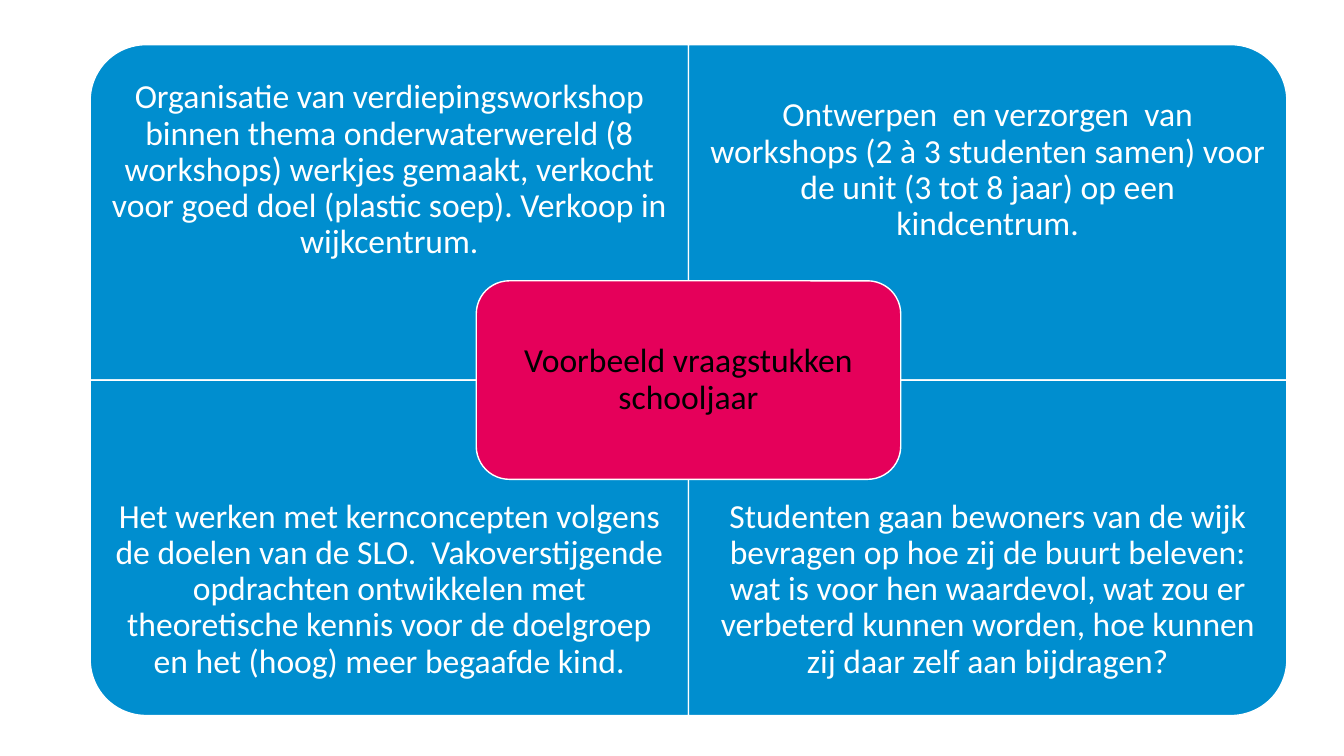
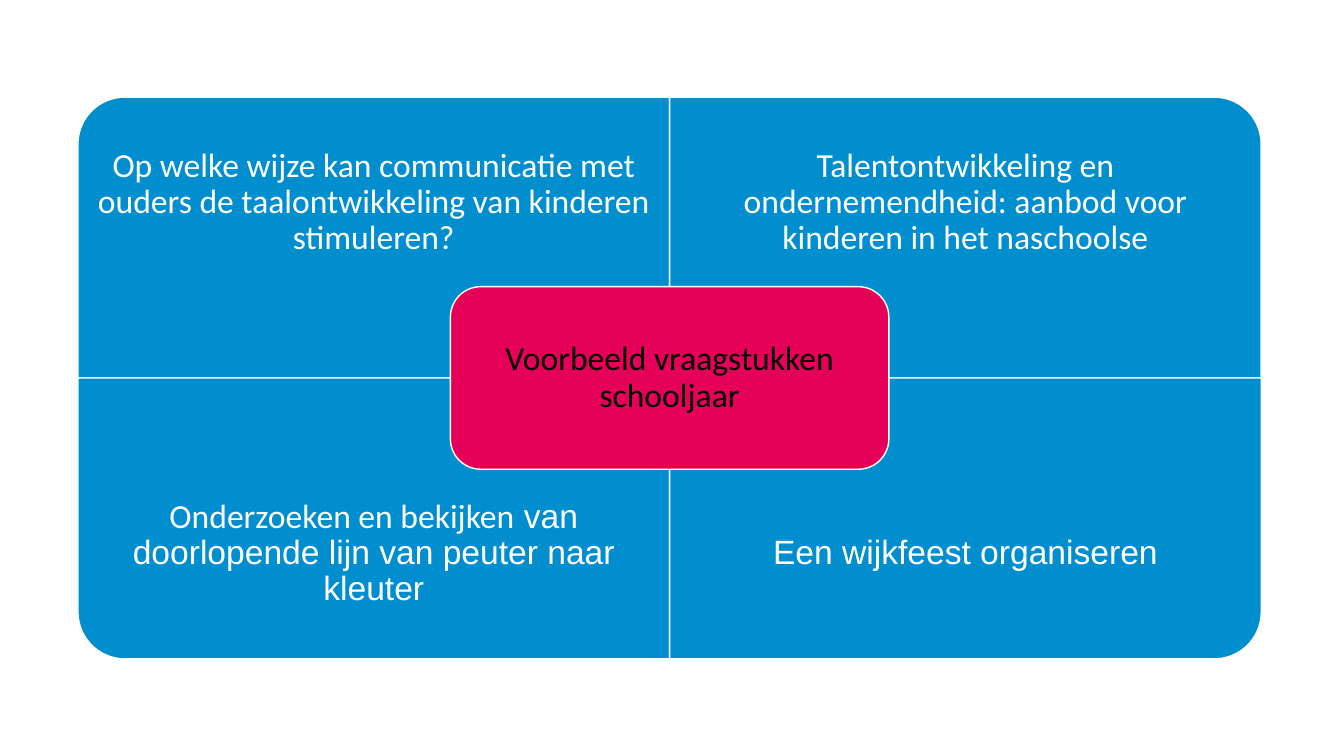
from pptx import Presentation
from pptx.dml.color import RGBColor
from pptx.enum.shapes import MSO_SHAPE
from pptx.enum.text import MSO_ANCHOR, PP_ALIGN
from pptx.util import Pt

BLUE = RGBColor(0x00, 0x8E, 0xCF)
PINK = RGBColor(0xE5, 0x00, 0x5A)
WHITE = RGBColor(0xFF, 0xFF, 0xFF)
BLACK = RGBColor(0x00, 0x00, 0x00)
BODY, ALTERNATE = "Calibri", "Arial"
TEXT_SHARE = 0.75
CORNERS = [(0, 0, 270), (1, 0, 0), (0, 1, 180), (1, 1, 90)]
TOPIC = [("Voorbeeld vraagstukken schooljaar", BODY)]

MATRICES = [
    {
        "center": (491.8, 271.5),
        "panel": (427.4, 239.6),
        "core": (303.2, 141.8),
        "questions": [
            [("Organisatie van verdiepingsworkshop binnen thema onderwaterwereld "
              "(8 workshops) werkjes gemaakt, verkocht voor goed doel (plastic soep). "
              "Verkoop in wijkcentrum.", BODY)],
            [("Ontwerpen  en verzorgen  van workshops (2 à 3 studenten samen) voor "
              "de unit (3 tot 8 jaar) op een kindcentrum.", BODY)],
            [("Het werken met kernconcepten volgens de doelen van de SLO.  "
              "Vakoverstijgende opdrachten ontwikkelen met theoretische kennis voor "
              "de doelgroep en het (hoog) meer begaafde kind.", BODY)],
            [("Studenten gaan bewoners van de wijk bevragen op hoe zij de buurt "
              "beleven: wat is voor hen waardevol, wat zou er verbeterd kunnen "
              "worden, hoe kunnen zij daar zelf aan bijdragen?", BODY)],
        ],
    },
    {
        "center": (478.3, 270),
        "panel": (422.6, 200.6),
        "core": (313.2, 130.4),
        "questions": [
            [("Op welke wijze kan communicatie met ouders de taalontwikkeling van "
              "kinderen stimuleren?", BODY)],
            [("Talentontwikkeling en ondernemendheid: aanbod voor kinderen in het "
              "naschoolse", BODY)],
            [("Onderzoeken en bekijken", BODY),
             (" van doorlopende lijn van peuter naar kleuter", ALTERNATE)],
            [("Een wijkfeest organiseren", ALTERNATE)],
        ],
    },
]


class Deck:
    """Builds slides with four question panels around a central topic."""

    def __init__(self):
        self.presentation = Presentation()
        self.presentation.slide_width = Pt(960)
        self.presentation.slide_height = Pt(540)
        self.slide = None

    def new_slide(self):
        self.slide = self.presentation.slides.add_slide(self.presentation.slide_layouts[6])

    def block(self, preset, center, size, color, rotation=0):
        (x, y), (width, height) = center, size
        block = self.slide.shapes.add_shape(
            preset, Pt(x - width / 2), Pt(y - height / 2), Pt(width), Pt(height))
        block.rotation = rotation
        block.shadow.inherit = False
        block.fill.solid()
        block.fill.fore_color.rgb = color
        block.line.color.rgb = WHITE
        block.line.width = Pt(1)
        return block

    def add_text(self, frame, runs, color, inset):
        frame.word_wrap = True
        frame.vertical_anchor = MSO_ANCHOR.MIDDLE
        frame.margin_left = frame.margin_right = Pt(inset)
        frame.margin_top = frame.margin_bottom = Pt(inset)
        paragraph = frame.paragraphs[0]
        paragraph.alignment = PP_ALIGN.CENTER
        paragraph.line_spacing = 0.9
        for text, font in runs:
            run = paragraph.add_run()
            run.text = text
            run.font.name = font
            run.font.size = Pt(24)
            run.font.color.rgb = color

    def panel(self, left, top, size, row, rotation, runs):
        width, height = size
        middle = (left + width / 2, top + height / 2)
        unturned = (height, width) if rotation % 180 else size
        self.block(MSO_SHAPE.ROUND_1_RECTANGLE, middle, unturned, BLUE, rotation)
        text_height = height * TEXT_SHARE
        text_top = top + row * (height - text_height)
        question = self.slide.shapes.add_textbox(
            Pt(left), Pt(text_top), Pt(width), Pt(text_height))
        self.add_text(question.text_frame, runs, WHITE, 13.4)

    def core(self, center, size):
        topic = self.block(MSO_SHAPE.ROUNDED_RECTANGLE, center, size, PINK)
        self.add_text(topic.text_frame, TOPIC, BLACK, 7.2)

    def matrix(self, center, panel, core, questions):
        self.new_slide()
        (x, y), (width, height) = center, panel
        for (column, row, rotation), runs in zip(CORNERS, questions):
            left = x + (column - 1) * width
            top = y + (row - 1) * height
            self.panel(left, top, panel, row, rotation, runs)
        self.core(center, core)


def main():
    deck = Deck()
    for matrix in MATRICES:
        deck.matrix(**matrix)
    deck.presentation.save("out.pptx")


if __name__ == "__main__":
    main()
